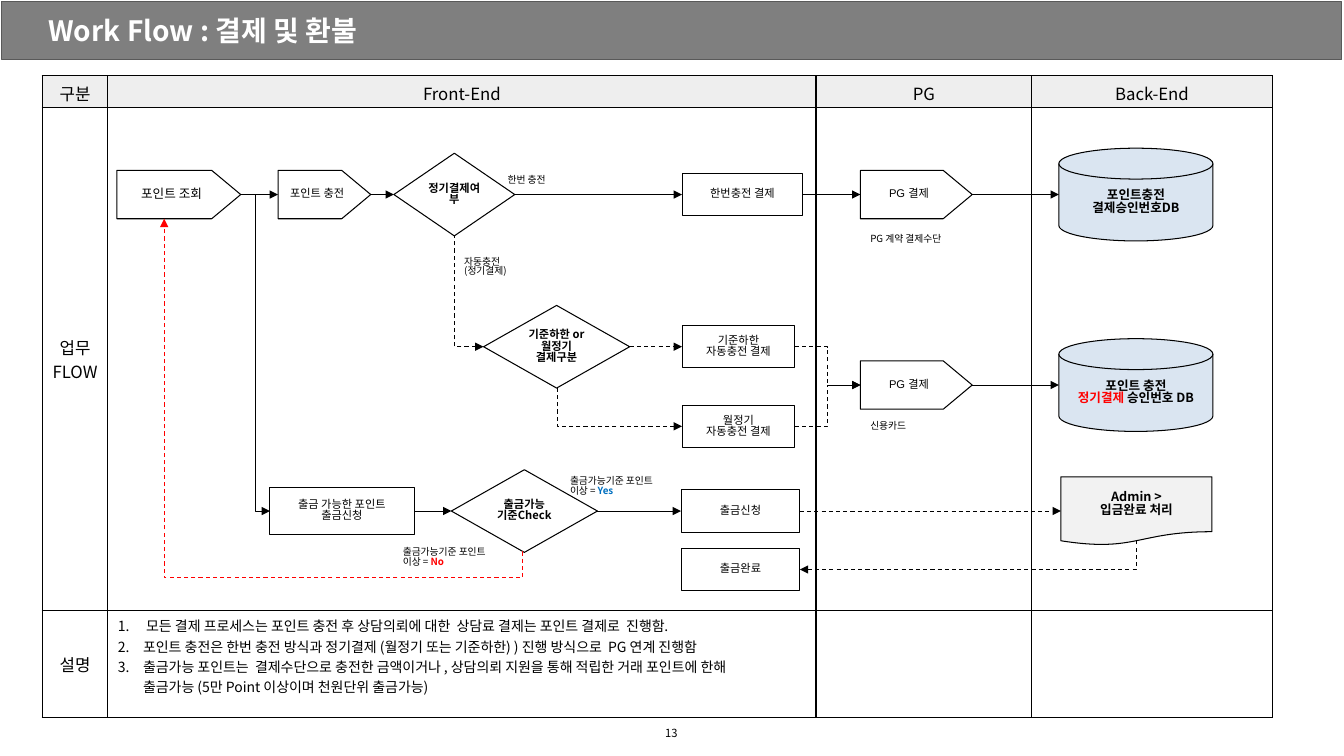
from lxml import etree
from pptx import Presentation
from pptx.dml.color import RGBColor
from pptx.enum.dml import MSO_LINE
from pptx.enum.shapes import MSO_CONNECTOR, MSO_SHAPE
from pptx.enum.text import MSO_ANCHOR, PP_ALIGN
from pptx.oxml.ns import qn
from pptx.util import Pt

PX = 9144
RECT = MSO_SHAPE.RECTANGLE
BOX = MSO_SHAPE.FLOWCHART_PROCESS
PLATE = MSO_SHAPE.PENTAGON
CHOICE = MSO_SHAPE.FLOWCHART_DECISION
DISK = MSO_SHAPE.FLOWCHART_MAGNETIC_DISK
PAPER = MSO_SHAPE.FLOWCHART_DOCUMENT
LINE, ELBOW = MSO_CONNECTOR.STRAIGHT, MSO_CONNECTOR.ELBOW
DASH = MSO_LINE.DASH
LEFT, CENTER = PP_ALIGN.LEFT, PP_ALIGN.CENTER
TOP, MIDDLE = MSO_ANCHOR.TOP, MSO_ANCHOR.MIDDLE
NOTO, ARIAL = "Noto Sans CJK KR", "Arial"
COLORS = {"black": "000000", "white": "FFFFFF", "red": "FF0000",
          "blue": "0070C0", "bar": "7F7F7F", "edge": "595959",
          "head": "EEEEEE", "disk": "DAE5F1", "paper": "F2F2F2"}


def rgb(name):
    return RGBColor.from_string(COLORS[name])


class Flow:
    """Draws flow chart parts on one slide in a shared style."""

    def __init__(self, slide):
        self.shapes = slide.shapes

    def put(self, frame, lines, size, bold=False, color="black", font=NOTO,
            align=CENTER, space=None):
        frame.word_wrap = True
        for i, line in enumerate(lines):
            para = frame.add_paragraph() if i else frame.paragraphs[0]
            para.alignment, para.line_spacing = align, space
            style = para.font
            style.size, style.bold, style.name = Pt(size), bold, font
            style.color.rgb = rgb(color)
            base = para._p.pPr.find(qn("a:defRPr"))
            etree.SubElement(base, qn("a:ea"), typeface=NOTO)
            if isinstance(line, str):
                para.text = line
                continue
            for text, tint in line:
                run = para.add_run()
                run.text = text
                if tint:
                    run.font.color.rgb = rgb(tint)
                    run.font.bold = True

    def shape(self, kind, x, y, w, h, fill=None, edge="black"):
        item = self.shapes.add_shape(kind, x * PX, y * PX, w * PX, h * PX)
        item.shadow.inherit = False
        if fill:
            item.fill.solid()
            item.fill.fore_color.rgb = rgb(fill)
        else:
            item.fill.background()
        item.line.color.rgb = rgb(edge)
        item.line.width = Pt(0.75)
        return item

    def node(self, kind, x, mid, w, h, lines, size=8, fill=None, bold=False,
             font=NOTO):
        item = self.shape(kind, x, mid - h // 2, w, h, fill)
        frame = item.text_frame
        frame.vertical_anchor = MIDDLE
        if kind == PLATE:
            item.adjustments[0] = 0.6
        if kind == CHOICE:
            frame.margin_left = frame.margin_right = 4 * PX
        self.put(frame, lines, size, bold, font=font, space=0.83)
        return item

    def label(self, x, y, w, h, lines, size=7, pad=10, **style):
        item = self.shapes.add_textbox(x * PX, y * PX, w * PX, h * PX)
        frame = item.text_frame
        frame.margin_left = pad * PX
        frame.vertical_anchor = MIDDLE
        self.put(frame, lines, size, **style)

    def arrow(self, start, end, kind=LINE, dash=False, color="black", tip="tailEnd"):
        ends = [v * PX for v in (*start, *end)]
        item = self.shapes.add_connector(kind, *ends)
        item.line.color.rgb = rgb(color)
        item.line.width = Pt(0.75)
        if dash:
            item.line.dash_style = DASH
        props = item._element.spPr
        etree.SubElement(props.find(qn("a:ln")), qn("a:" + tip), type="triangle")
        etree.SubElement(props, qn("a:effectLst"))
        return item

    def link(self, a, b, dash=False):
        item = self.arrow((0, 0), (1, 1), dash=dash)
        item.begin_connect(a, 3)
        item.end_connect(b, 1)

    def corner(self, start, end):
        item = self.arrow(end, start, ELBOW, True, tip="headEnd")
        item._element.spPr.find(qn("a:prstGeom")).set("prst", "bentConnector2")

    def loop(self, start, end, depth, color):
        (x1, y1), (x2, y2) = start, end
        mx, my = (x1 + x2) // 2, (y1 + y2) // 2
        w, h = y1 - y2, x1 - x2
        item = self.arrow((mx + w // 2, my - h // 2), (mx - w // 2, my + h // 2),
                          ELBOW, True, color)
        props = item._element.spPr
        props.find(qn("a:xfrm")).set("rot", "5400000")
        guides = props.find(qn("a:prstGeom")).get_or_add_avLst()
        etree.SubElement(guides, qn("a:gd"), name="adj1",
                         fmla=f"val {round(-depth / w * 100000)}")

    def table(self, x, y, cols, rows, cells, notes):
        grid = self.shapes.add_table(len(rows), len(cols), x * PX, y * PX,
                                     sum(cols) * PX, sum(rows) * PX).table
        for col, w in zip(grid.columns, cols):
            col.width = w * PX
        for row, h in zip(grid.rows, rows):
            row.height = h * PX
        for r in range(len(rows)):
            for c in range(len(cols)):
                cell = grid.cell(r, c)
                props = cell._tc.get_or_add_tcPr()
                for side in ("lnL", "lnR", "lnT", "lnB"):
                    edge = etree.SubElement(props, qn("a:" + side), w=str(Pt(1)))
                    fill = etree.SubElement(edge, qn("a:solidFill"))
                    etree.SubElement(fill, qn("a:srgbClr"), val=COLORS["black"])
                if r:
                    cell.fill.background()
                else:
                    cell.fill.solid()
                    cell.fill.fore_color.rgb = rgb("head")
                cell.vertical_anchor = MIDDLE
                if (r, c) in cells:
                    self.put(cell.text_frame, cells[r, c], 12)
        cell = grid.cell(2, 1)
        cell.vertical_anchor = TOP
        self.put(cell.text_frame, notes, 10, align=LEFT)
        for para in cell.text_frame.paragraphs:
            props = para._p.pPr
            props.set("marL", str(25 * PX))
            props.set("indent", str(-25 * PX))
            mark = etree.Element(qn("a:buAutoNum"), type="arabicPeriod")
            props.find(qn("a:defRPr")).addprevious(mark)


def main():
    deck = Presentation()
    deck.slide_width, deck.slide_height = 1334 * PX, 750 * PX
    flow = Flow(deck.slides.add_slide(deck.slide_layouts[6]))

    flow.shape(RECT, 2, 2, 1330, 57, "bar", "edge")
    flow.label(29, 0, 1276, 60, ["Work Flow : 결제 및 환불"], 20, 19,
               bold=True, color="white", align=LEFT)
    flow.table(42, 75, (65, 703, 214, 239), (32, 499, 106), {
        (0, 0): ["구분"], (0, 1): ["Front-End"], (0, 2): ["PG"],
        (0, 3): ["Back-End"], (1, 0): ["업무", "FLOW"], (2, 0): ["설명"],
    }, [
        " 모든 결제 프로세스는 포인트 충전 후 상담의뢰에 대한  상담료 결제는 포인트 결제로  진행함.",
        "포인트 충전은 한번 충전 방식과 정기결제 (월정기 또는 기준하한) ) 진행 방식으로  PG 연계 진행함",
        "출금가능 포인트는  결제수단으로 충전한 금액이거나 , 상담의뢰 지원을 통해 적립한 거래 포인트에 한해"
        "\v출금가능 (5만 Point 이상이며 천원단위 출금가능)",
    ])
    flow.label(0, 708, 1333, 39, ["13"], 8)

    view = flow.node(PLATE, 116, 193, 123, 48, ["포인트 조회"], 9, font=ARIAL)
    charge = flow.node(PLATE, 276, 193, 92, 48, ["포인트 충전"], font=ARIAL)
    cycle = flow.node(CHOICE, 391, 193, 120, 82, ["정기결제여부"],
                      fill="white", bold=True)
    once = flow.node(BOX, 677, 193, 120, 42, ["한번충전 결제"])
    pay = flow.node(PLATE, 854, 193, 111, 48, ["PG 결제"], font=ARIAL)
    flow.node(DISK, 1051, 193, 153, 92, ["포인트충전", "결제승인번호DB"], 9,
              "disk", True)

    basis = flow.node(CHOICE, 480, 344, 145, 82, ["기준하한 or", "월정기 결제구분"],
                      fill="white", bold=True)
    floor = flow.node(BOX, 677, 344, 112, 42, ["기준하한", "자동충전 결제"])
    flow.node(BOX, 677, 423, 112, 42, ["월정기", "자동충전 결제"])
    flow.node(PLATE, 854, 382, 111, 48, ["PG 결제"], font=ARIAL)
    flow.node(DISK, 1051, 382, 153, 92,
              ["포인트 충전", [("정기결제", "red"), (" 승인번호 DB", None)]], 9,
              "disk", True)

    ask = flow.node(BOX, 268, 507, 143, 46, ["출금 가능한 포인트", "출금신청"])
    check = flow.node(CHOICE, 448, 507, 145, 82, ["출금가능", "기준Check"],
                      fill="white", bold=True)
    apply = flow.node(BOX, 676, 507, 118, 42, ["출금신청"])
    admin = flow.node(PAPER, 1053, 507, 150, 68, ["Admin >", "입금완료 처리"], 9,
                      "paper", True)
    flow.node(BOX, 676, 565, 118, 42, ["출금완료"])

    for a, b in ((view, charge), (charge, cycle), (cycle, once), (once, pay),
                 (ask, check), (check, apply)):
        flow.link(a, b)
    flow.link(basis, floor, True)
    flow.link(apply, admin, True)
    for mid in (193, 382):
        flow.arrow((965, mid), (1051, mid))
    flow.arrow((239, 193), (268, 507), ELBOW)
    for mid in (344, 423):
        flow.arrow((789, mid), (854, 382), ELBOW, True)
    flow.corner((451, 234), (480, 344))
    flow.corner((553, 385), (677, 423))
    flow.corner((1128, 536), (794, 565))
    flow.loop((520, 548), (163, 217), 26, "red")

    for x, y, w, h, lines in (
        (494, 168, 74, 22, ["한번 충전"]),
        (451, 248, 74, 34, ["자동충전", "(정기결제)"]),
        (854, 227, 128, 22, ["PG 계약 결제수단"]),
        (854, 412, 128, 22, ["신용카드"]),
        (556, 466, 121, 34, ["출금가능기준 포인트", [("이상 = ", None), ("Yes", "blue")]]),
        (390, 536, 121, 34, ["출금가능기준 포인트", [("이상 = ", None), ("No", "red")]]),
    ):
        flow.label(x, y, w, h, lines, align=LEFT, space=0.83)
    deck.save("out.pptx")


if __name__ == "__main__":
    main()
